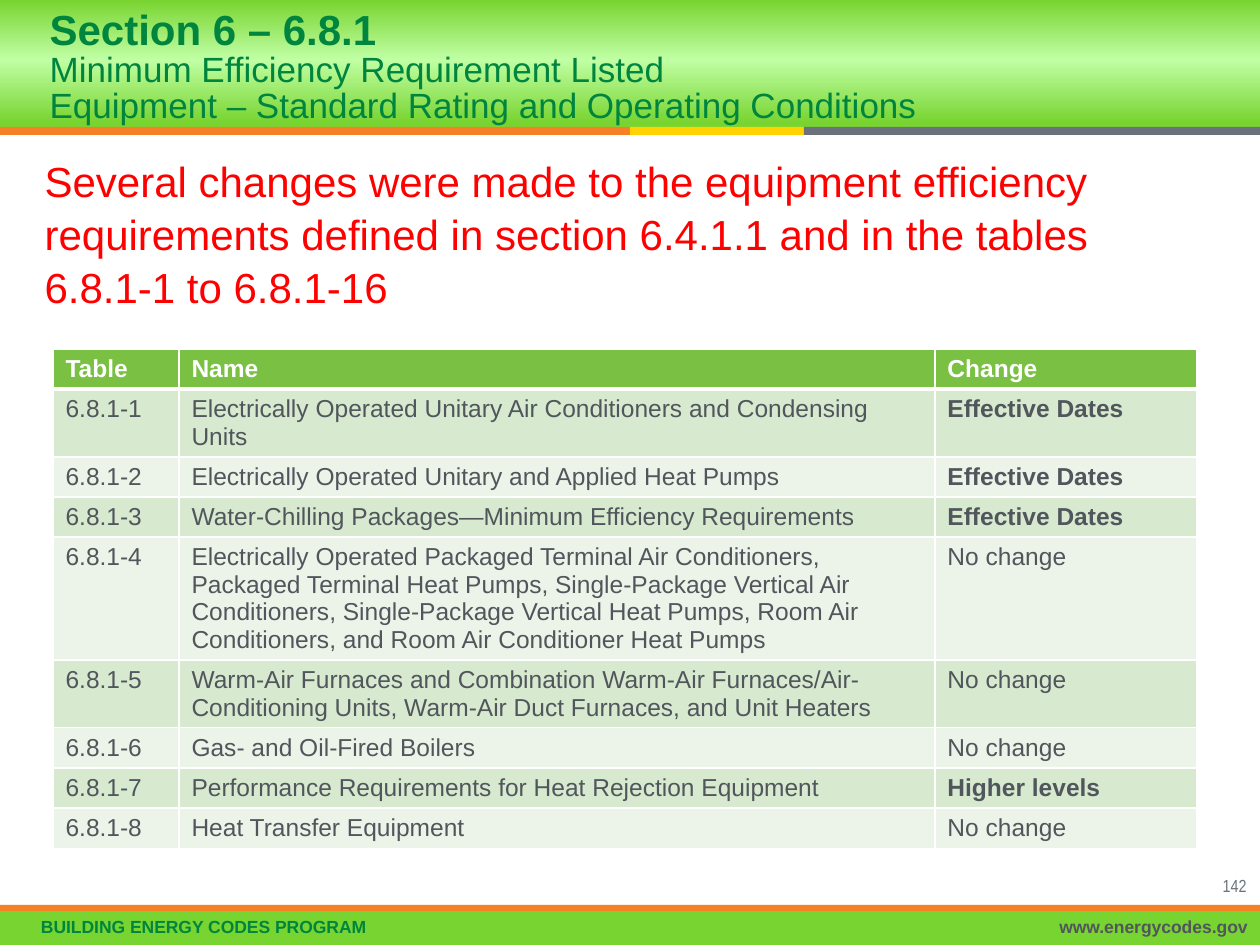
"""Build the slide on changes to the equipment efficiency tables."""
from copy import deepcopy
from lxml import etree
from pptx import Presentation, util as u
from pptx.dml.color import RGBColor
from pptx.enum import shapes, text
from pptx.oxml import ns

PX = 914400 // 126
GREEN = RGBColor(0x78, 0xD4, 0x30)
PALE = RGBColor(0xC0, 0xFF, 0xA4)
DEEP = RGBColor(0x00, 0x85, 0x3F)
ORANGE = RGBColor(0xF5, 0x80, 0x25)
GOLD = RGBColor(0xFF, 0xD2, 0x00)
GRAY = RGBColor(0x6A, 0x73, 0x7B)
DARK = RGBColor(0x50, 0x56, 0x5C)
RED = RGBColor(0xFF, 0x00, 0x00)
WHITE = RGBColor(0xFF, 0xFF, 0xFF)
HEAD = RGBColor(0x7A, 0xC1, 0x43)
ROWS = RGBColor(0xD7, 0xE9, 0xCF), RGBColor(0xEC, 0xF4, 0xE9)

TITLE = "Section 6 – 6.8.1"
LINES = ("Minimum Efficiency Requirement Listed",
         "Equipment – Standard Rating and Operating Conditions")
BODY = ("Several changes were made to the equipment efficiency requirements "
        "defined in section 6.4.1.1 and in the tables 6.8.1-1 to 6.8.1-16")
BARS = [
    ((0, 911, 1260, 34), GREEN),
    ((0, 127, 630, 8), ORANGE),
    ((630, 127, 174, 8), GOLD),
    ((804, 127, 456, 8), GRAY),
    ((0, 905, 1260, 6), ORANGE),
]
LABELS = [
    ("BUILDING ENERGY CODES PROGRAM", (9, 912, 1004, 33), 32,
     dict(color=DEEP, bold=True, space=0.9)),
    ("www.energycodes.gov", (755, 912, 505, 33), 13,
     dict(color=DARK, bold=True, space=0.9, align=text.PP_ALIGN.RIGHT)),
    ("142", (1169, 869, 90, 23), 13,
     dict(color=GRAY, name="Arial Narrow", align=text.PP_ALIGN.RIGHT)),
]
COLS = 126, 756, 262
TABLE = [
    ("Table", "Name", "Change"),
    ("6.8.1-1", "Electrically Operated Unitary Air Conditioners and "
     "Condensing Units", "Effective Dates"),
    ("6.8.1-2", "Electrically Operated Unitary and Applied Heat Pumps",
     "Effective Dates"),
    ("6.8.1-3", "Water-Chilling Packages—Minimum Efficiency Requirements",
     "Effective Dates"),
    ("6.8.1-4", "Electrically Operated Packaged Terminal Air Conditioners, "
     "Packaged Terminal Heat Pumps, Single-Package Vertical Air "
     "Conditioners, Single-Package Vertical Heat Pumps, Room Air "
     "Conditioners, and Room Air Conditioner Heat Pumps", "No change"),
    ("6.8.1-5", "Warm-Air Furnaces and Combination Warm-Air "
     "Furnaces/Air-Conditioning Units, Warm-Air Duct Furnaces, and Unit "
     "Heaters", "No change"),
    ("6.8.1-6", "Gas- and Oil-Fired Boilers", "No change"),
    ("6.8.1-7", "Performance Requirements for Heat Rejection Equipment",
     "Higher levels"),
    ("6.8.1-8", "Heat Transfer Equipment", "No change"),
]


def scale(box):
    return [n * PX for n in box]


def write(para, words, size=10, color=DARK, bold=False, name="Arial",
          align=None, space=None):
    run = para.add_run()
    run.text = words
    font = run.font
    font.size, font.bold, font.name = u.Pt(size), bold, name
    font.color.rgb = color
    para.alignment, para.line_spacing = align, space
    para.space_before = u.Pt(0)


def bar(slide, box):
    shape = slide.shapes.add_shape(shapes.MSO_SHAPE.RECTANGLE, *scale(box))
    shape.shadow.inherit = False
    shape.line.fill.background()
    return shape


def banner(slide):
    fill = bar(slide, (-4, 0, 1264, 127)).fill
    fill.gradient()
    fill.gradient_angle = 270
    last = fill.gradient_stops[1]._gs
    last.addprevious(deepcopy(last))
    for stop, (pos, color) in zip(
            fill.gradient_stops, [(0, GREEN), (0.47, PALE), (0.97, GREEN)]):
        stop.position, stop.color.rgb = pos, color


def place(slide, shape, box):
    shape.left, shape.top, shape.width, shape.height = scale(box)
    slide.shapes._spTree.append(shape._element)
    frame = shape.text_frame
    frame.auto_size = text.MSO_AUTO_SIZE.NONE
    return frame


def edge(cell, side, width):
    line = etree.SubElement(cell._tc.get_or_add_tcPr(), ns.qn("a:" + side),
                            w=str(u.Pt(width)))
    fill = etree.SubElement(line, ns.qn("a:solidFill"))
    etree.SubElement(fill, ns.qn("a:srgbClr"), val=str(WHITE))


def grid(slide):
    box = scale((53, 349, sum(COLS), 39 * len(TABLE)))
    table = slide.shapes.add_table(len(TABLE), len(COLS), *box).table
    for col, width in zip(table.columns, COLS):
        col.width = width * PX
    for r, row in enumerate(TABLE):
        for c, words in enumerate(row):
            cell = table.cell(r, c)
            for side in ("lnL", "lnR", "lnT", "lnB"):
                thick = (r, side) in ((0, "lnB"), (1, "lnT"))
                edge(cell, side, 3 if thick else 1)
            cell.fill.solid()
            cell.fill.fore_color.rgb = ROWS[(r - 1) % 2] if r else HEAD
            strong = r == 0 or (c == 2 and words != "No change")
            write(cell.text_frame.paragraphs[0], words, size=14, bold=strong,
                  color=DARK if r else WHITE)


def main():
    deck = Presentation()
    deck.slide_width, deck.slide_height = scale((1260, 945))
    slide = deck.slides.add_slide(deck.slide_layouts[1])
    banner(slide)
    for box, color in BARS:
        shape = bar(slide, box)
        shape.fill.solid()
        shape.fill.fore_color.rgb = color
    for words, box, pad, style in LABELS:
        frame = slide.shapes.add_textbox(*scale(box)).text_frame
        frame.word_wrap = True
        frame.margin_left = pad * PX
        write(frame.paragraphs[0], words, **style)

    frame = place(slide, slide.shapes.title, (37, 5, 1184, 127))
    frame.vertical_anchor = text.MSO_ANCHOR.MIDDLE
    para = frame.paragraphs[0]
    style = dict(color=DEEP, space=0.85, align=text.PP_ALIGN.LEFT)
    write(para, TITLE, size=24, bold=True, **style)
    for line in LINES:
        para.add_line_break()
        write(para, line, size=20, **style)

    frame = place(slide, slide.placeholders[1], (32, 147, 1187, 725))
    para = frame.paragraphs[0]
    props = para._p.get_or_add_pPr()
    props.set("marL", "0")
    props.set("indent", "0")
    etree.SubElement(props, ns.qn("a:buNone"))
    write(para, BODY, size=24, color=RED, space=1.05)
    grid(slide)
    deck.save("out.pptx")


if __name__ == "__main__":
    main()
